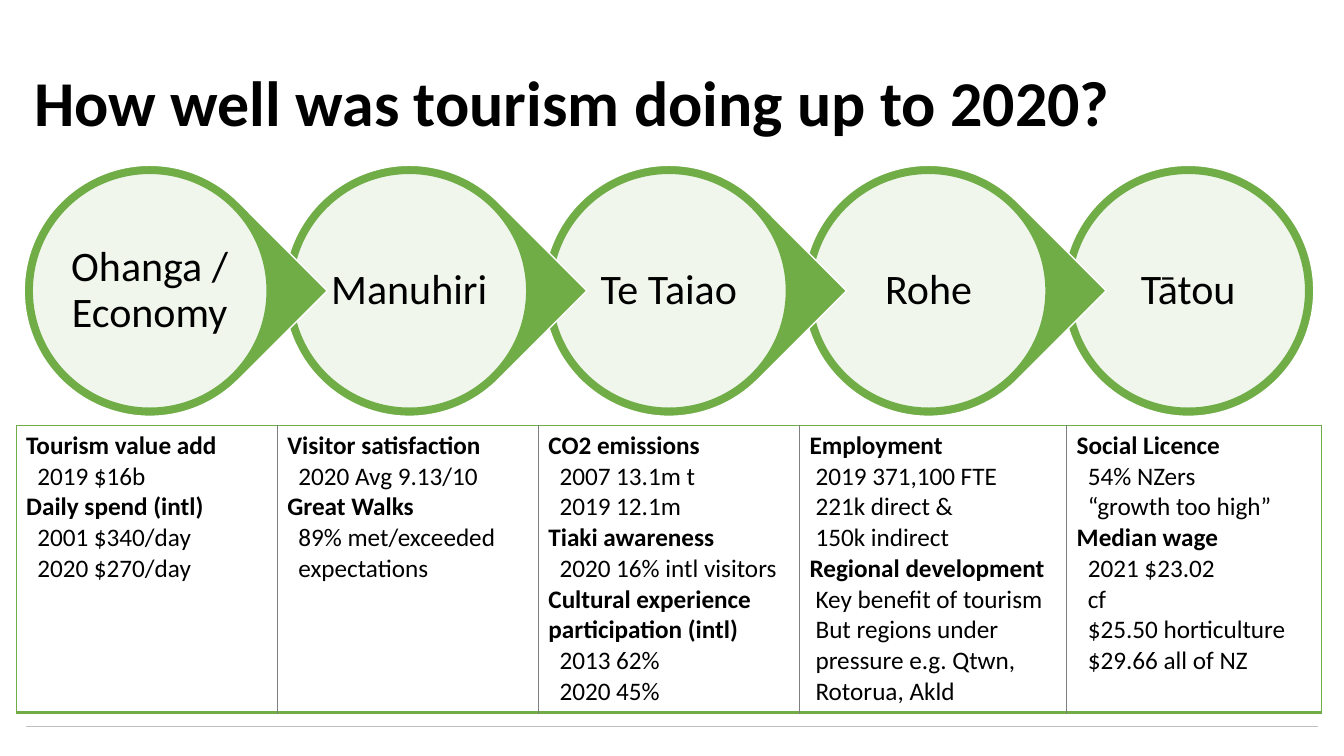
"""Build a slide on how tourism fared up to 2020, with five linked discs over a table."""
import dataclasses

import lxml.etree
import pptx
import pptx.dml.color
import pptx.enum.shapes
import pptx.enum.text
import pptx.oxml.ns
import pptx.util

SCALE = 9144
FONT = "Calibri"
GREEN = pptx.dml.color.RGBColor(0x70, 0xAD, 0x47)
WHITE = pptx.dml.color.RGBColor(0xFF, 0xFF, 0xFF)
BLACK = pptx.dml.color.RGBColor(0x00, 0x00, 0x00)
SILVER = pptx.dml.color.RGBColor(0xBF, 0xBF, 0xBF)
GREY = pptx.dml.color.RGBColor(0x7F, 0x7F, 0x7F)

LEFT, TOP, SIZE, RIM, PITCH = 24, 164, 249, 8, 257.5


@dataclasses.dataclass
class Theme:
    """One disc and the table cell below it."""
    name: str
    width: int
    indent: int
    facts: list[tuple[str, list[str]]]


THEMES = [
    Theme("Ohanga / Economy", 259, 11, [
        ("Tourism value add", ["2019 $16b"]),
        ("Daily spend (intl)", ["2001 $340/day", "2020 $270/day"]),
    ]),
    Theme("Manuhiri", 259, 11, [
        ("Visitor satisfaction", ["2020 Avg 9.13/10"]),
        ("Great Walks", ["89% met/exceeded", "expectations"]),
    ]),
    Theme("Te Taiao", 259, 11, [
        ("CO2 emissions", ["2007 13.1m t", "2019 12.1m"]),
        ("Tiaki awareness", ["2020 16% intl visitors"]),
        ("Cultural experience participation (intl)", ["2013 62%", "2020 45%"]),
    ]),
    Theme("Rohe", 265, 6, [
        ("Employment", ["2019 371,100 FTE", "221k direct &", "150k indirect"]),
        ("Regional development", ["Key benefit of tourism", "But regions under",
                                  "pressure e.g. Qtwn,", "Rotorua, Akld"]),
    ]),
    Theme("Tātou", 253, 11, [
        ("Social Licence", ["54% NZers", "“growth too high”"]),
        ("Median wage", ["2021 $23.02", "cf", "$25.50 horticulture", "$29.66 all of NZ"]),
    ]),
]


def px(*sizes: float) -> list[pptx.util.Emu]:
    """Turn px lengths into EMU."""
    return [pptx.util.Emu(round(size * SCALE)) for size in sizes]


def style(para, size: float, bold: bool = False) -> None:
    """Set the font of a paragraph."""
    para.font.name = FONT
    para.font.size = pptx.util.Pt(size)
    para.font.bold = bold
    para.font.color.rgb = BLACK


def add_title(slide, text: str) -> None:
    """Move, fill and format the title."""
    title = slide.shapes.title
    title.left, title.top, title.width, title.height = px(24, 33, 1199, 145)
    frame = title.text_frame
    frame.text = text
    frame.auto_size = pptx.enum.text.MSO_AUTO_SIZE.NONE
    frame.vertical_anchor = pptx.enum.text.MSO_ANCHOR.MIDDLE
    para = frame.paragraphs[0]
    para.alignment = pptx.enum.text.PP_ALIGN.LEFT
    para.line_spacing = 0.9
    style(para, 45.6, True)


def add_rule(slide) -> None:
    """Draw the thin line at the foot."""
    kind = pptx.enum.shapes.MSO_CONNECTOR.STRAIGHT
    rule = slide.shapes.add_connector(kind, *px(26, 721, 1307, 721))
    rule.line.color.rgb = SILVER
    rule.line.width = pptx.util.Pt(1)
    lxml.etree.SubElement(rule._element.spPr, pptx.oxml.ns.qn("a:effectLst"))


def add_shape(slide, kind, left: float, top: int, size: int, fill, line):
    """Draw a round shape with a fill and a thin line."""
    shape = slide.shapes.add_shape(kind, *px(left, top, size, size))
    shape.shadow.inherit = False
    shape.fill.solid()
    shape.fill.fore_color.rgb = fill
    shape.line.color.rgb = line
    shape.line.width = pptx.util.Pt(1)
    return shape


def add_disc(slide, index: int, name: str) -> None:
    """Draw one rim, pointed unless last, and its named disc."""
    kinds = pptx.enum.shapes.MSO_SHAPE
    left = LEFT + index * PITCH
    last = index == len(THEMES) - 1
    rim = add_shape(slide, kinds.OVAL if last else kinds.TEAR, left, TOP, SIZE, GREEN, WHITE)
    rim.rotation = 0 if last else 45
    disc = add_shape(slide, kinds.OVAL, left + RIM, TOP + RIM, SIZE - 2 * RIM, WHITE, GREEN)
    tint = disc._element.spPr.find(".//" + pptx.oxml.ns.qn("a:srgbClr"))
    lxml.etree.SubElement(tint, pptx.oxml.ns.qn("a:alpha"), val="90000")
    frame = disc.text_frame
    frame.word_wrap = True
    frame.margin_left = frame.margin_right = frame.margin_top = frame.margin_bottom = 0
    frame.vertical_anchor = pptx.enum.text.MSO_ANCHOR.MIDDLE
    para = frame.paragraphs[0]
    para.text = name
    para.alignment = pptx.enum.text.PP_ALIGN.CENTER
    para.line_spacing = 0.9
    style(para, 30)


def add_edge(cell, side: str, color, width: float) -> None:
    """Add one border to a cell."""
    qn = pptx.oxml.ns.qn
    props = cell._tc.get_or_add_tcPr()
    edge = lxml.etree.SubElement(props, qn("a:ln" + side), w=str(pptx.util.Pt(width)))
    fill = lxml.etree.SubElement(edge, qn("a:solidFill"))
    lxml.etree.SubElement(fill, qn("a:srgbClr"), val=str(color))


def fill_cell(cell, theme: Theme) -> None:
    """Write bold heads with indented facts below."""
    lines = []
    for head, facts in theme.facts:
        lines.append((head, True))
        lines.extend((fact, False) for fact in facts)
    frame = cell.text_frame
    for index, (text, bold) in enumerate(lines):
        para = frame.add_paragraph() if index else frame.paragraphs[0]
        para.text = text
        if not bold:
            para._p.get_or_add_pPr().set("marL", str(theme.indent * SCALE))
        style(para, 18, bold)


def add_facts(slide) -> None:
    """Add the one-row table of facts."""
    count = len(THEMES)
    width = sum(theme.width for theme in THEMES)
    table = slide.shapes.add_table(1, count, *px(16, 422, width, 285)).table
    table.first_row = table.horz_banding = False
    for index, theme in enumerate(THEMES):
        table.columns[index].width = px(theme.width)[0]
        cell = table.cell(0, index)
        fill_cell(cell, theme)
        for side, outer in (("L", index == 0), ("R", index == count - 1)):
            add_edge(cell, side, GREEN if outer else GREY, 1 if outer else 0.5)
        add_edge(cell, "T", GREEN, 1)
        add_edge(cell, "B", GREEN, 2)
        cell.fill.background()


def main() -> None:
    """Build and save the deck."""
    deck = pptx.Presentation()
    deck.slide_width, deck.slide_height = px(1333, 750)
    slide = deck.slides.add_slide(deck.slide_layouts[5])
    add_rule(slide)
    add_title(slide, "How well was tourism doing up to 2020?")
    for index in reversed(range(len(THEMES))):
        add_disc(slide, index, THEMES[index].name)
    add_facts(slide)
    deck.save("out.pptx")


if __name__ == "__main__":
    main()
